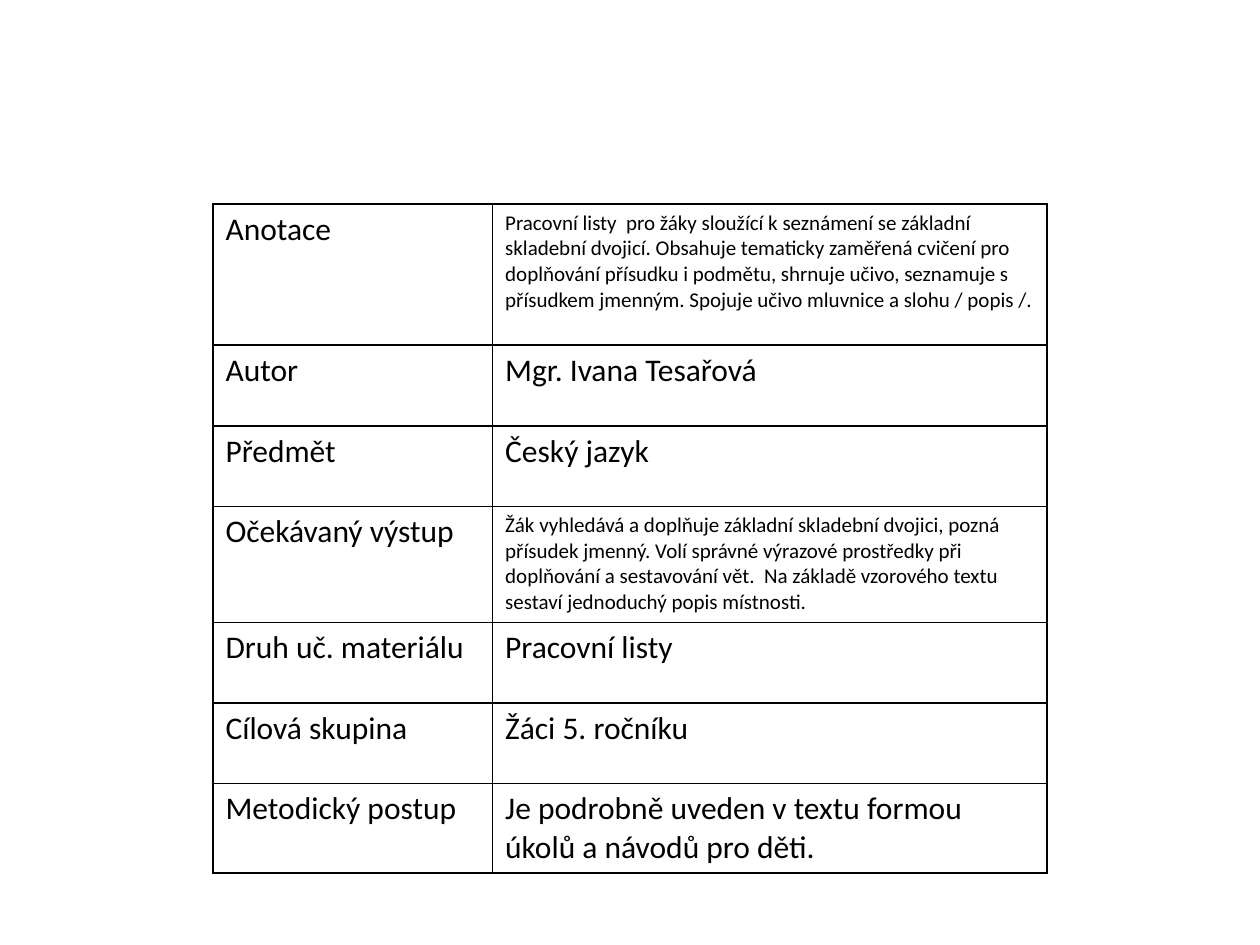
from lxml.etree import SubElement
from pptx import Presentation
from pptx.dml.color import RGBColor
from pptx.oxml.ns import qn
from pptx.util import Inches, Pt

BLACK = RGBColor(0x00, 0x00, 0x00)
FONT = "Calibri"
LARGE, SMALL = 18, 12

# label, description, description size, row height in inches
ROWS = [
    ("Anotace",
     "Pracovní listy  pro žáky sloužící k seznámení se základní skladební dvojicí. "
     "Obsahuje tematicky zaměřená cvičení pro doplňování přísudku i podmětu, "
     "shrnuje učivo, seznamuje s přísudkem jmenným. "
     "Spojuje učivo mluvnice a slohu / popis /.", SMALL, 1.12),
    ("Autor", "Mgr. Ivana Tesařová", LARGE, 0.64),
    ("Předmět", "Český jazyk", LARGE, 0.64),
    ("Očekávaný výstup",
     "Žák vyhledává a doplňuje základní skladební dvojici, pozná přísudek jmenný. "
     "Volí správné výrazové prostředky při doplňování a sestavování vět.  "
     "Na základě vzorového textu sestaví jednoduchý popis místnosti.", SMALL, 0.92),
    ("Druh uč. materiálu", "Pracovní listy", LARGE, 0.64),
    ("Cílová skupina", "Žáci 5. ročníku", LARGE, 0.64),
    ("Metodický postup",
     "Je podrobně uveden v textu formou úkolů a návodů pro děti.", LARGE, 0.71),
]
COLUMN_WIDTHS = (2.22, 4.4)
LEFT, TOP = 1.69, 1.62


def add_borders(cell):
    properties = cell._tc.get_or_add_tcPr()
    for position, side in enumerate(("a:lnL", "a:lnR", "a:lnT", "a:lnB")):
        line = properties.makeelement(qn(side), {"w": str(Pt(1))})
        properties.insert(position, line)
        fill = SubElement(line, qn("a:solidFill"))
        SubElement(fill, qn("a:srgbClr"), val=str(BLACK))


def fill_cell(cell, text, size):
    cell.text = text
    cell.fill.background()
    font = cell.text_frame.paragraphs[0].font
    font.name = FONT
    font.size = Pt(size)
    font.bold = False
    font.color.rgb = BLACK
    add_borders(cell)


def main():
    presentation = Presentation()
    presentation.slide_width = Inches(10)
    presentation.slide_height = Inches(7.5)
    slide = presentation.slides.add_slide(presentation.slide_layouts[6])

    table = slide.shapes.add_table(
        len(ROWS), len(COLUMN_WIDTHS), Inches(LEFT), Inches(TOP),
        Inches(sum(COLUMN_WIDTHS)), Inches(sum(row[-1] for row in ROWS))).table
    table.first_row = False
    table.horz_banding = False
    for column, width in zip(table.columns, COLUMN_WIDTHS):
        column.width = Inches(width)
    for row, (label, description, size, height) in zip(table.rows, ROWS):
        row.height = Inches(height)
        fill_cell(row.cells[0], label, LARGE)
        fill_cell(row.cells[1], description, size)

    presentation.save("out.pptx")


if __name__ == "__main__":
    main()
